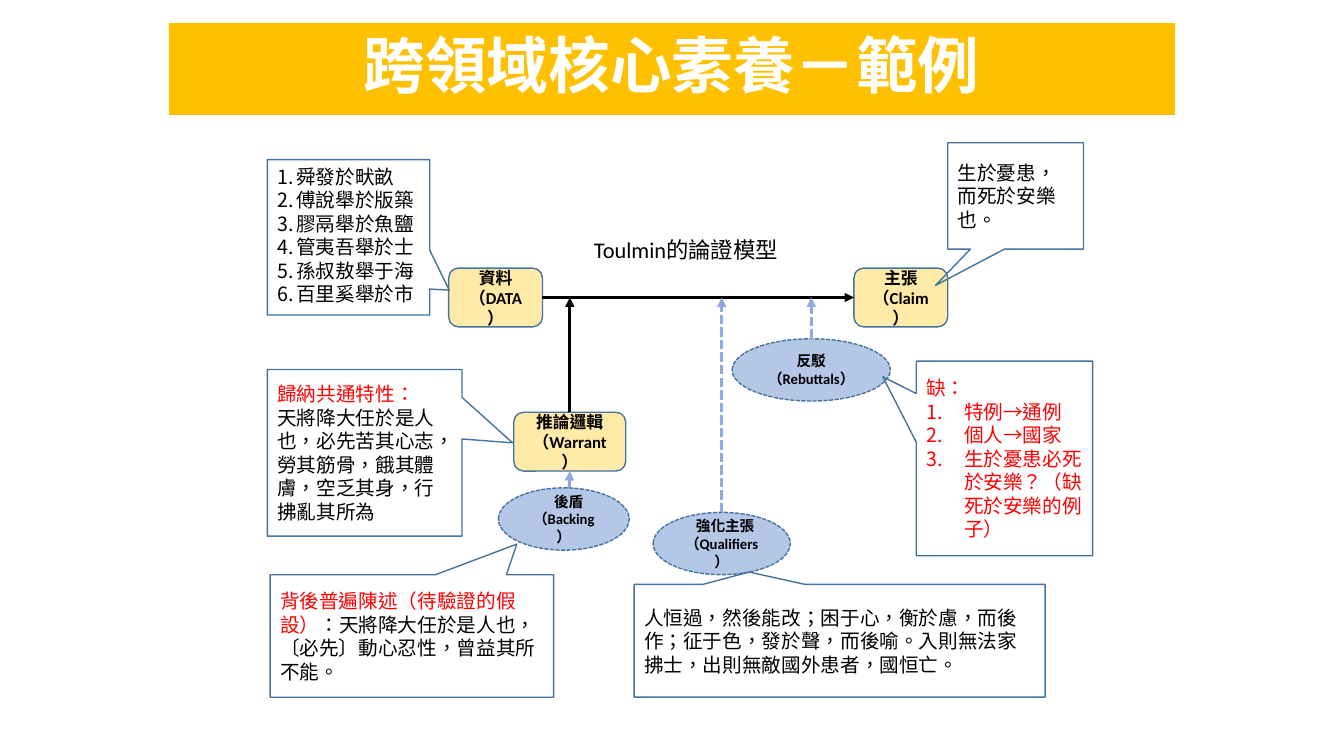
from dataclasses import dataclass

import pptx
import pptx.dml.color
import pptx.enum.dml
import pptx.enum.lang
import pptx.enum.shapes
import pptx.enum.text
import pptx.oxml
import pptx.oxml.ns
import pptx.util

Pt = pptx.util.Pt
RGBColor = pptx.dml.color.RGBColor
Shape = pptx.enum.shapes.MSO_SHAPE
Align = pptx.enum.text.PP_ALIGN
Anchor = pptx.enum.text.MSO_ANCHOR
Dash = pptx.enum.dml.MSO_LINE

WHITE = RGBColor(0xFF, 0xFF, 0xFF)
BLACK = RGBColor(0, 0, 0)
RED = RGBColor(0xFF, 0, 0)
GOLD = RGBColor(0xFF, 0xC0, 0x00)
CREAM = RGBColor(0xFF, 0xEA, 0xA7)
PALE_BLUE = RGBColor(0xB4, 0xC7, 0xE7)
ARROW_BLUE = RGBColor(0x8F, 0xAA, 0xDC)
OUTLINE = RGBColor(0x43, 0x73, 0x9E)
LATIN_FONT = "Calibri"
CJK_FONT = "Noto Sans CJK SC"
AXIS_Y = 212.5


@dataclass
class Run:
    text: str
    color: RGBColor = BLACK


@dataclass
class Para:
    runs: list[Run]
    indent: float = 0
    numbered: bool = False


@dataclass
class Node:
    name: str
    box: tuple[float, float, float, float]
    paras: list[Para]


@dataclass
class Callout:
    box: tuple[float, float, float, float]
    tip: tuple[float, float]
    paras: list[Para]
    anchor: Anchor = Anchor.MIDDLE


def para(text: str, color: RGBColor = BLACK, indent: float = 0, numbered: bool = False) -> Para:
    return Para([Run(text, color)], indent, numbered)


def add_child(parent, tag: str, **attrs: str) -> None:
    el = pptx.oxml.parse_xml(f"<{tag} {pptx.oxml.ns.nsdecls('a')}/>")
    for key, value in attrs.items():
        el.set(key, value)
    parent.append(el)


def write(sp, paras: list[Para], size: float, bold: bool = False, align: Align = Align.LEFT,
          anchor: Anchor = Anchor.MIDDLE, spacing: float = 1.0) -> None:
    tf = sp.text_frame
    tf.word_wrap = True
    tf.vertical_anchor = anchor
    for i, item in enumerate(paras):
        p = tf.add_paragraph() if i else tf.paragraphs[0]
        p.alignment = align
        p.line_spacing = spacing
        pPr = p._p.get_or_add_pPr()
        if item.indent:
            pPr.set("marL", str(Pt(item.indent)))
        if item.numbered:
            pPr.set("indent", str(-Pt(item.indent)))
            add_child(pPr, "a:buFont", typeface="+mj-lt")
            add_child(pPr, "a:buAutoNum", type="arabicPeriod")
        for run in item.runs:
            r = p.add_run()
            r.text = run.text
            r.font.size = Pt(size)
            r.font.bold = bold
            r.font.color.rgb = run.color
            r.font.name = LATIN_FONT
            r.font.language_id = pptx.enum.lang.MSO_LANGUAGE_ID.TRADITIONAL_CHINESE
            add_child(r.font._element, "a:ea", typeface=CJK_FONT)


def add_box(s, kind: Shape, box: tuple[float, float, float, float], fill: RGBColor | None = None,
            line: RGBColor = OUTLINE, width: float = 1, dashed: bool = False):
    sp = s.shapes.add_shape(kind, *map(Pt, box))
    sp.shadow.inherit = False
    if fill is None:
        sp.fill.background()
    else:
        sp.fill.solid()
        sp.fill.fore_color.rgb = fill
    sp.line.color.rgb = line
    sp.line.width = Pt(width)
    if dashed:
        sp.line.dash_style = Dash.SQUARE_DOT
    return sp


def add_arrow(s, start: tuple[float, float], end: tuple[float, float], color: RGBColor = BLACK,
              dashed: bool = False):
    c = s.shapes.add_connector(pptx.enum.shapes.MSO_CONNECTOR.STRAIGHT, *map(Pt, start + end))
    c.line.color.rgb = color
    c.line.width = Pt(2.25)
    if dashed:
        c.line.dash_style = Dash.SQUARE_DOT
    add_child(c.line._get_or_add_ln(), "a:tailEnd", type="triangle")
    add_child(c._element.spPr, "a:effectLst")
    return c


BOXES = [
    Node("data", (320.5, 191.5, 67, 42), [para("資料"), para("（DATA）")]),
    Node("claim", (610, 191.5, 67, 42), [para("主張"), para("（Claim）")]),
    Node("warrant", (367, 294.5, 80, 42), [para("推論邏輯 （Warrant）")]),
]
ELLIPSES = [
    Node("qualifiers", (466.5, 366, 98, 44.5), [para("強化主張", indent=5), para("（Qualifiers）")]),
    Node("rebuttals", (523, 242, 113, 44.5), [para("反駁"), para("（Rebuttals）")]),
    Node("backing", (356, 348.5, 93.5, 44.5), [para("後盾", indent=7), para("（Backing）")]),
]
EVIDENCE = ["舜發於畎畝", "傅說舉於版築", "膠鬲舉於魚鹽", "管夷吾舉於士", "孫叔敖舉于海", "百里奚舉於市"]
GAPS = ["特例→通例", "個人→國家", "生於憂患必死於安樂？（缺死於安樂的例子）"]
CALLOUTS = [
    Callout((191, 114, 116, 111), (0.62, 0.34),
            [para(t, indent=13.5, numbered=True) for t in EVIDENCE], Anchor.TOP),
    Callout((677, 102, 97, 76), (-0.59, 0.84), [para("生於憂患，而死於安樂也。")]),
    Callout((191, 264, 139, 119), (0.76, -0.06),
            [para("歸納共通特性：", RED),
             para("天將降大任於是人也，必先苦其心志，勞其筋骨，餓其體膚，空乏其身，行拂亂其所為")]),
    Callout((193, 410.5, 202.5, 87.5), (0.37, -0.75),
            [Para([Run("背後普遍陳述（待驗證的假設）", RED),
                   Run("：天將降大任於是人也，〔必先〕動心忍性，曾益其所不能。")])]),
    Callout((453, 417.5, 293.5, 80.5), (-0.22, -0.61),
            [para("人恒過，然後能改；困于心，衡於慮，而後作；征于色，發於聲，而後喻。"
                  "入則無法家拂士，出則無敵國外患者，國恒亡。")]),
    Callout((654.5, 258, 126, 139), (-0.69, -0.42),
            [para("缺：", RED)] + [para(t, RED, 27, True) for t in GAPS]),
]


def main() -> None:
    prs = pptx.Presentation()
    prs.slide_width, prs.slide_height = Pt(960), Pt(540)
    s = prs.slides.add_slide(prs.slide_layouts[6])

    title = add_box(s, Shape.RECTANGLE, (120, 15.5, 720, 67.5), GOLD, WHITE, 1.5)
    write(title, [para("跨領域核心素養－範例", WHITE)], 44, True, Align.CENTER, spacing=0.9)
    caption = s.shapes.add_textbox(Pt(389), Pt(165), Pt(202), Pt(26.5))
    write(caption, [para("Toulmin的論證模型")], 16, align=Align.CENTER, anchor=Anchor.TOP)

    nodes = {}
    for node in BOXES:
        sp = nodes[node.name] = add_box(s, Shape.ROUNDED_RECTANGLE, node.box, CREAM)
        write(sp, node.paras, 12, True, Align.CENTER)

    main_line = add_arrow(s, (387.5, AXIS_Y), (610, AXIS_Y))
    main_line.begin_connect(nodes["data"], 3)
    main_line.end_connect(nodes["claim"], 1)
    add_arrow(s, (407, 294.5), (407, AXIS_Y)).begin_connect(nodes["warrant"], 0)
    support = add_arrow(s, (406, 367), (407, 336.5), ARROW_BLUE, True)
    support.end_connect(nodes["warrant"], 2)

    for node in ELLIPSES:
        sp = nodes[node.name] = add_box(s, Shape.OVAL, node.box, PALE_BLUE, dashed=True)
        write(sp, node.paras, 10.5, True, Align.CENTER)
    for name in ("qualifiers", "rebuttals"):
        sp = nodes[name]
        x = (sp.left + sp.width / 2) / Pt(1)
        arrow = add_arrow(s, (x, sp.top / Pt(1)), (x, AXIS_Y), ARROW_BLUE, True)
        arrow.begin_connect(sp, 0)

    for callout in CALLOUTS:
        sp = add_box(s, Shape.RECTANGULAR_CALLOUT, callout.box)
        sp.adjustments[0], sp.adjustments[1] = callout.tip
        write(sp, callout.paras, 14, anchor=callout.anchor)

    prs.save("out.pptx")


if __name__ == "__main__":
    main()
